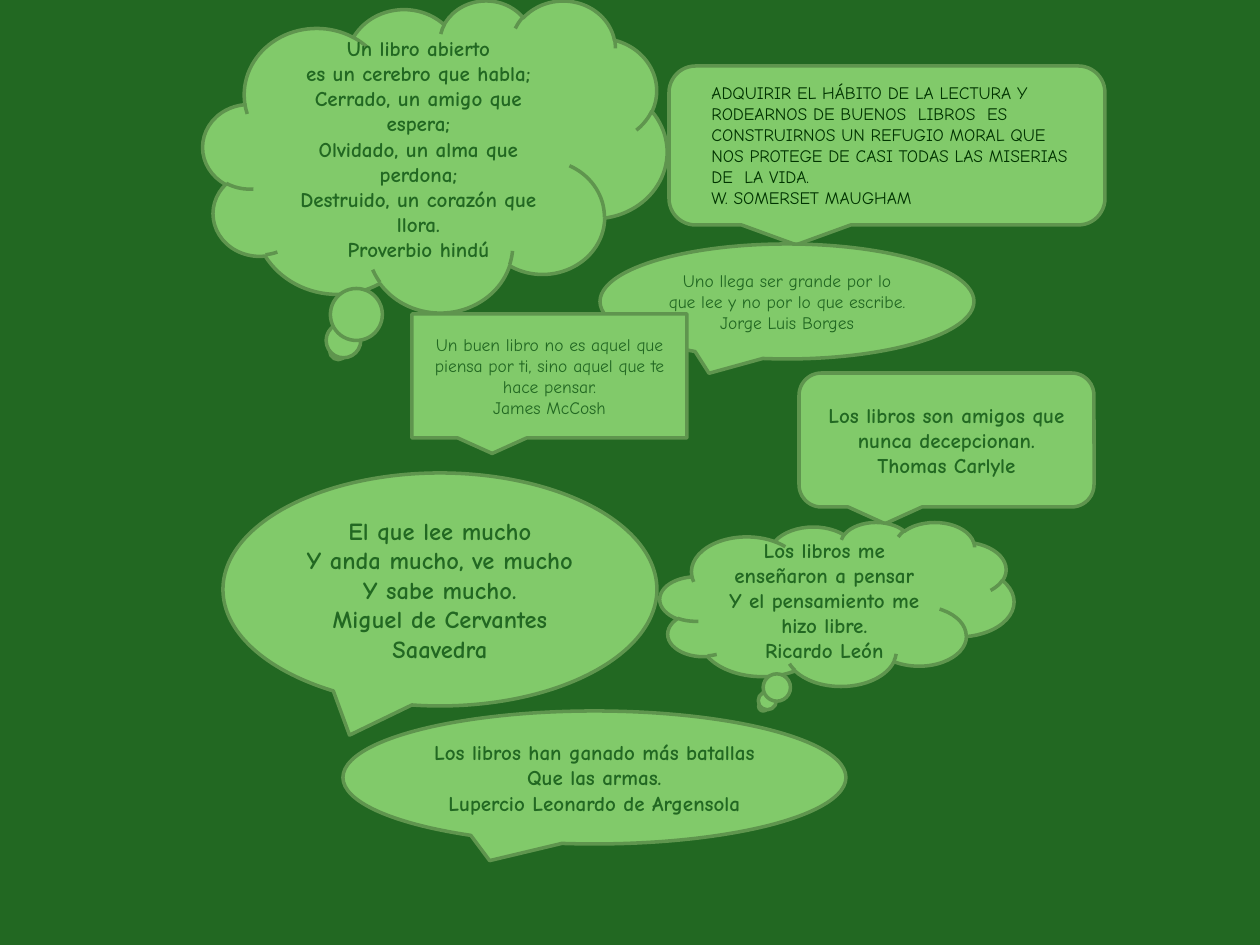
from pptx import Presentation
from pptx.dml.color import RGBColor
from pptx.enum.shapes import MSO_SHAPE
from pptx.enum.text import MSO_ANCHOR, MSO_AUTO_SIZE, PP_ALIGN
from pptx.util import Emu, Pt

EMU_PER_PX = 914400 / 126
FONT = "Comic Neue"
DARK_GREEN = "226822"
LIGHT_GREEN = "81CA6A"
BORDER_GREEN = "5F954E"
INK_GREEN = "003300"

ROUNDED = MSO_SHAPE.ROUNDED_RECTANGULAR_CALLOUT
OVAL = MSO_SHAPE.OVAL_CALLOUT
CLOUD = MSO_SHAPE.CLOUD_CALLOUT
RECTANGLE = MSO_SHAPE.RECTANGULAR_CALLOUT

# Shape, place (left, top, width, height in px), text size, paragraphs; back to front
QUOTES = [
    (ROUNDED, (669, 66, 436, 159), 10, []),
    (OVAL, (600, 244, 374, 115), 10, [
        "Uno llega ser grande por lo que lee y no por lo que escribe.",
        "Jorge Luis Borges"]),
    (CLOUD, (203, 0, 464, 312), 12, [
        "Un libro abierto",
        "es un cerebro que habla;",
        "Cerrado, un amigo que espera;",
        "Olvidado, un alma que perdona;",
        "Destruido, un corazón que llora.",
        "Proverbio hindú"]),
    (ROUNDED, (799, 373, 295, 134), 12, [
        "Los libros son amigos que nunca decepcionan.",
        "Thomas Carlyle"]),
    (RECTANGLE, (412, 314, 275, 124), 10, [
        "Un buen libro no es aquel que piensa por ti, sino aquel que te hace pensar.",
        "James McCosh"]),
    (OVAL, (223, 473, 434, 233), 14, [
        "El que lee mucho",
        "Y anda mucho, ve mucho",
        "Y sabe mucho.",
        "Miguel de Cervantes Saavedra"]),
    (CLOUD, (660, 522, 354, 164), 12, [
        "Los libros me enseñaron a pensar",
        "Y el pensamiento me hizo libre.",
        "Ricardo León"]),
    (OVAL, (343, 711, 503, 133), 12, [
        "Los libros han ganado más batallas",
        "Que las armas.",
        "Lupercio Leonardo de Argensola"]),
]

MAUGHAM_PLACE = (699, 76, 387, 140)
MAUGHAM_QUOTE = [
    "ADQUIRIR EL HÁBITO DE LA LECTURA Y RODEARNOS DE BUENOS  LIBROS  ES "
    "CONSTRUIRNOS UN REFUGIO MORAL QUE NOS PROTEGE DE CASI TODAS LAS MISERIAS "
    "DE  LA VIDA.",
    "W. SOMERSET MAUGHAM",
]


def px(length):
    return Emu(round(length * EMU_PER_PX))


def paint(color_format, color):
    color_format.rgb = RGBColor.from_string(color)


def write(frame, lines, size, color, align, bold=False):
    frame.word_wrap = True
    frame.text = "\n".join(lines)
    for para in frame.paragraphs:
        para.alignment = align
        for span in para.runs:
            span.font.name = FONT
            span.font.size = Pt(size)
            span.font.bold = bold
            paint(span.font.color, color)


def add_callout(slide, kind, place, size, lines):
    callout = slide.shapes.add_shape(kind, *map(px, place))
    callout.shadow.inherit = False
    callout.fill.solid()
    paint(callout.fill.fore_color, LIGHT_GREEN)
    paint(callout.line.color, BORDER_GREEN)
    callout.line.width = Pt(2)
    if lines:
        callout.text_frame.vertical_anchor = MSO_ANCHOR.MIDDLE
        # Larger quotes are bold
        write(callout.text_frame, lines, size, DARK_GREEN, PP_ALIGN.CENTER, size > 10)


def add_text(slide, place, size, lines):
    box = slide.shapes.add_textbox(*map(px, place))
    write(box.text_frame, lines, size, INK_GREEN, PP_ALIGN.LEFT)
    box.text_frame.auto_size = MSO_AUTO_SIZE.SHAPE_TO_FIT_TEXT


def main():
    deck = Presentation()
    deck.slide_width, deck.slide_height = px(1260), px(945)
    slide = deck.slides.add_slide(deck.slide_layouts[6])

    # Background
    slide.background.fill.solid()
    paint(slide.background.fill.fore_color, DARK_GREEN)

    # Speech and thought bubbles
    for quote in QUOTES:
        add_callout(slide, *quote)

    # Left-aligned quote over the empty bubble
    add_text(slide, MAUGHAM_PLACE, 10, MAUGHAM_QUOTE)

    deck.save("out.pptx")


if __name__ == "__main__":
    main()
